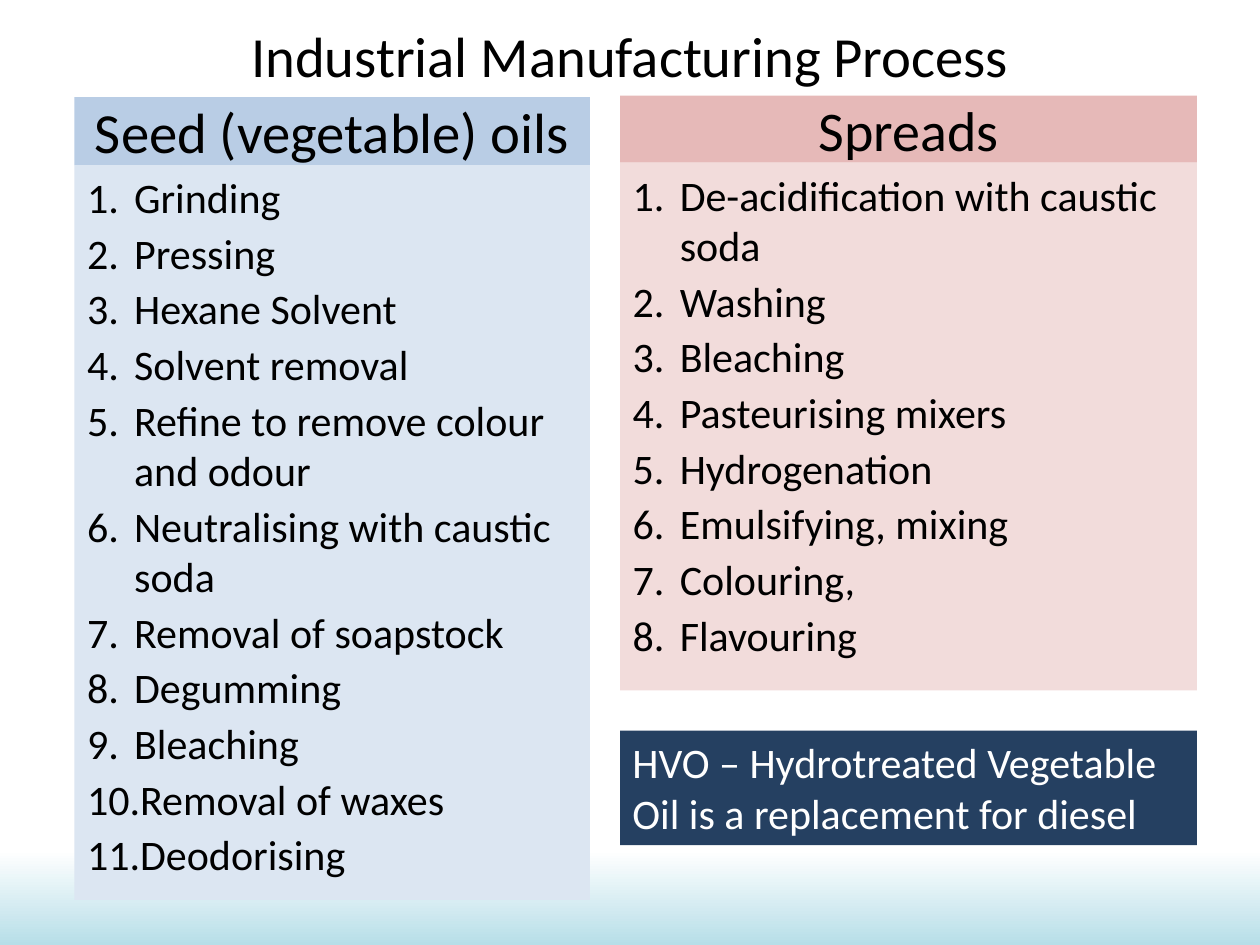
from copy import deepcopy

from lxml import etree
from pptx import Presentation
from pptx import util as u
from pptx.dml.color import RGBColor
from pptx.enum import shapes, text
from pptx.oxml.ns import qn

INDENT = u.Cm(0.95)


def color(value):
    return RGBColor.from_string(value)


def write_text(shape, lines, size=24, ink="000000", align=text.PP_ALIGN.LEFT,
               anchor=text.MSO_ANCHOR.TOP, after=0, numbered=False):
    frame = shape.text_frame
    frame.text = "\n".join(lines)
    frame.word_wrap = True
    frame.auto_size = text.MSO_AUTO_SIZE.NONE
    frame.vertical_anchor = anchor
    for paragraph in frame.paragraphs:
        paragraph.alignment = align
        paragraph.line_spacing = 1.0
        paragraph.space_before = u.Pt(0)
        paragraph.space_after = u.Pt(after)
        font = paragraph.runs[0].font
        font.name, font.size, font.bold = "Calibri", u.Pt(size), False
        font.color.rgb = color(ink)
        if numbered:
            properties = paragraph._p.get_or_add_pPr()
            properties.set("marL", str(INDENT))
            properties.set("indent", str(-INDENT))
            etree.SubElement(properties, qn("a:buAutoNum"), type="arabicPeriod")


class SlideBuilder:
    """Holds the slide and the shared style of its elements."""

    def __init__(self, slide):
        self.slide = slide

    def background(self, top, bottom):
        fill = self.slide.background.fill
        fill.gradient()
        fill.gradient_angle = 270
        first, last = fill.gradient_stops
        first.color.rgb, last.color.rgb = color(top), color(bottom)
        # Keep the top colour constant down to 90 %
        stops = next(self.slide._element.iter(qn("a:gsLst")))
        middle = deepcopy(stops[0])
        middle.set("pos", "90000")
        stops.insert(1, middle)

    def placeholder(self, index, box, fill=None):
        shape = self.slide.placeholders[index]
        shape.left, shape.top, shape.width, shape.height = map(u.Cm, box)
        if fill:
            shape.fill.solid()
            shape.fill.fore_color.rgb = color(fill)
        return shape

    def heading(self, index, box, words, size, fill=None):
        write_text(self.placeholder(index, box, fill), [words], size=size,
                   align=text.PP_ALIGN.CENTER, anchor=text.MSO_ANCHOR.MIDDLE)

    def steps(self, index, box, lines, fill):
        write_text(self.placeholder(index, box, fill), lines, after=3, numbered=True)

    def callout(self, box, words, fill):
        shape = self.slide.shapes.add_shape(shapes.MSO_SHAPE.RECTANGLE, *map(u.Cm, box))
        shape.shadow.inherit = False
        shape.fill.solid()
        shape.fill.fore_color.rgb = color(fill)
        shape.line.fill.background()
        write_text(shape, [words], ink="FFFFFF")


def main():
    presentation = Presentation()
    presentation.slide_width, presentation.slide_height = u.Cm(25.4), u.Cm(19.05)
    comparison = presentation.slide_layouts.get_by_name("Comparison")
    builder = SlideBuilder(presentation.slides.add_slide(comparison))
    builder.background("FFFFFF", "B7DEE8")

    # Slide title
    builder.heading(0, (1.27, 0.33, 22.86, 1.55), "Industrial Manufacturing Process", 32.4)

    # Left column: oils
    left, width = 1.5, 10.39
    builder.heading(1, (left, 1.96, width, 1.37), "Seed (vegetable) oils", 32.4, "B9CDE5")
    builder.steps(2, (left, 3.33, width, 14.81), [
        "Grinding", "Pressing", "Hexane Solvent", "Solvent removal",
        "Refine to remove colour and odour", "Neutralising with caustic soda",
        "Removal of soapstock", "Degumming", "Bleaching", "Removal of waxes",
        "Deodorising"], "DCE6F2")

    # Right column: spreads and a remark
    left, width = 12.5, 11.63
    builder.heading(3, (left, 1.93, width, 1.35), "Spreads", 32, "E6B9B8")
    builder.steps(4, (left, 3.28, width, 10.64), [
        "De-acidification with caustic soda", "Washing", "Bleaching",
        "Pasteurising mixers", "Hydrogenation", "Emulsifying, mixing",
        "Colouring,", "Flavouring"], "F2DCDB")
    builder.callout((left, 14.73, width, 2.31),
                    "HVO – Hydrotreated Vegetable Oil is a replacement for diesel", "254061")

    presentation.save("out.pptx")


if __name__ == "__main__":
    main()
